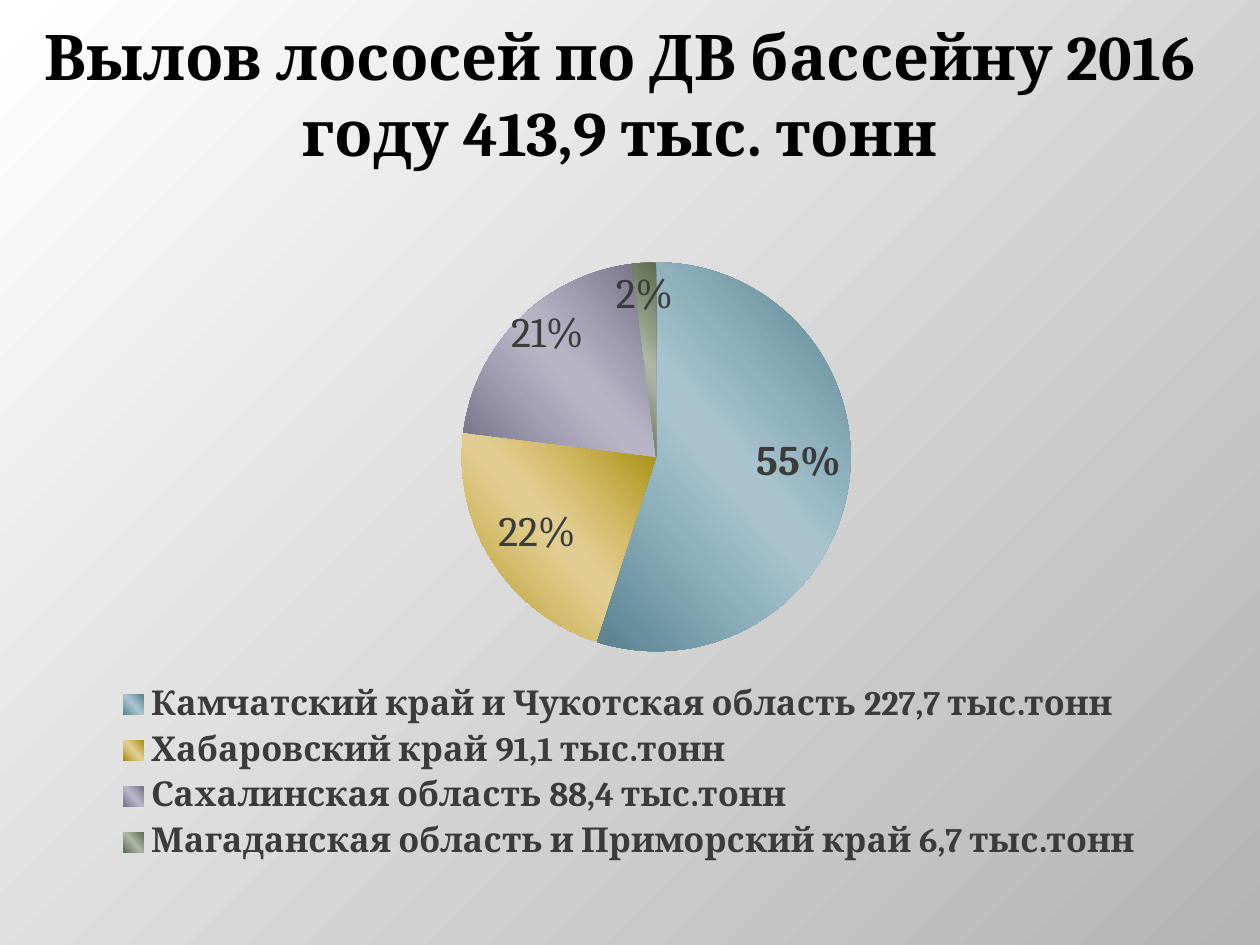
from lxml import etree
from pptx import Presentation
from pptx.chart.data import CategoryChartData
from pptx.dml.color import RGBColor
from pptx.enum import chart as ch, text as tx
from pptx.oxml.ns import qn
from pptx.util import Cm, Pt

TITLE = "Вылов лососей по ДВ бассейну 2016 году 413,9 тыс. тонн"
# region, share, gradient from edge to middle and back
CATCH = [
    ("Камчатский край и Чукотская область 227,7 тыс.тонн", 55,
     ("58808D", "8EB1BD", "A8C3CD", "A8C3CD", "8FB1BE", "58808D")),
    ("Хабаровский край 91,1 тыс.тонн", 22,
     ("A38C08", "D4BC6B", "E1CD91", "E1CD91", "D4BD6D", "A38C08")),
    ("Сахалинская область 88,4 тыс.тонн", 21,
     ("716E83", "A3A0B4", "B7B5C5", "B7B5C5", "A4A1B4", "716E83")),
    ("Магаданская область и Приморский край 6,7 тыс.тонн", 2,
     ("5D6B4D", "929D86", "ACB5A4", "ACB5A4", "939E87", "5D6B4D")),
]
STEPS = (0, 33, 47, 53, 68, 100)
ANGLE = 139
THEME = {
    "font": "Cambria", "ink": "000000", "soft": "3B3B3B",
    "back": ("FFFFFF", "B4B4B4"),
    "title": 36, "legend": 19.6, "label": 24, "base": 10,
}
# all lengths in centimetres; chart parts are measured from the chart's corner
TITLE_BOX = (0.43, 0.76, 24.13, 4.11)
CHART_BOX = (1.27, 4.45, 22.86, 13.08)
PIE = {"x": 8.04, "y": 0.84, "w": 7.84, "h": 7.84}
LEGEND = {"x": 1.02, "y": 9.23, "w": 20.8, "h": 3.83}
NUDGE = {"x": -0.26, "y": -0.3}


def style(font, size, ink, bold):
    look = {"name": THEME["font"], "size": Pt(size), "bold": bold}
    for key, val in look.items():
        setattr(font, key, val)
    font.color.rgb = RGBColor.from_string(THEME[ink])


def grade(node, stops):
    """Replace the colour stops of a gradient fill."""
    row = node.find(qn("a:gsLst"))
    for old in list(row):
        row.remove(old)
    for pos, hue in stops:
        stop = etree.SubElement(row, qn("a:gs"), pos=str(pos * 1000))
        etree.SubElement(stop, qn("a:srgbClr"), val=hue)


def place(node, spot, after=None, inner=False, edge=True):
    """Give a chart part a manual layout, from the edge or as an offset."""
    for old in node.findall(qn("c:layout")):
        node.remove(old)
    lay = etree.Element(qn("c:layout"))
    man = etree.SubElement(lay, qn("c:manualLayout"))
    if inner:
        etree.SubElement(man, qn("c:layoutTarget"), val="inner")
    if edge:
        for key in "xy":
            etree.SubElement(man, qn(f"c:{key}Mode"), val="edge")
    wide, high = CHART_BOX[2:]
    for key, val in spot.items():
        part = val / (wide if key in "xw" else high)
        etree.SubElement(man, qn(f"c:{key}"), val=str(part))
    node.insert(node.index(node.find(qn(after))) + 1 if after else 0, lay)


def paint(slide):
    slide.background.fill.gradient()
    node = slide.element.find(".//" + qn("p:bgPr")).find(qn("a:gradFill"))
    grade(node, zip((0, 100), THEME["back"]))
    node.remove(node.find(qn("a:lin")))
    way = etree.SubElement(node, qn("a:path"))
    way.set("path", "circle")
    etree.SubElement(way, qn("a:fillToRect"), r="100000", b="100000")


def head(slide):
    title = slide.shapes.title
    title.left, title.top, title.width, title.height = map(Cm, TITLE_BOX)
    frame = title.text_frame
    frame.text = TITLE
    look = {"word_wrap": True, "auto_size": tx.MSO_AUTO_SIZE.NONE,
            "vertical_anchor": tx.MSO_ANCHOR.MIDDLE, "margin_bottom": Cm(2)}
    for key, val in look.items():
        setattr(frame, key, val)
    para = frame.paragraphs[0]
    para.alignment = tx.PP_ALIGN.CENTER
    style(para.runs[0].font, THEME["title"], "ink", True)


def pie(slide):
    names, shares, hues = zip(*CATCH)
    data = CategoryChartData()
    data.categories = names
    data.add_series("Series 1", shares)
    chart = slide.shapes.add_chart(
        ch.XL_CHART_TYPE.PIE, *map(Cm, CHART_BOX), data).chart
    chart.has_title = False
    style(chart.font, THEME["base"], "ink", False)

    chart.has_legend = True
    legend = chart.legend
    legend.position = ch.XL_LEGEND_POSITION.BOTTOM
    legend.include_in_layout = False
    style(legend.font, THEME["legend"], "soft", True)

    plot = chart.plots[0]
    plot.vary_by_categories = True
    plot.has_data_labels = False
    series = plot.series[0]
    labels = series.data_labels
    look = {"show_percentage": True, "show_value": False,
            "number_format": "0%", "number_format_is_linked": False,
            "position": ch.XL_LABEL_POSITION.INSIDE_END}
    for key, val in look.items():
        setattr(labels, key, val)
    style(labels.font, THEME["label"], "soft", False)

    for i in range(len(CATCH)):
        form = series.points[i].format
        form.fill.gradient()
        form.line.fill.background()
    for i, bold in ((0, True), (2, False)):
        label = series.points[i].data_label
        style(label.font, THEME["label"], "soft", bold)
        label.position = look["position"]

    root = chart.element
    for key, val in (("showVal", "0"), ("showPercent", "1")):
        for node in root.xpath(f".//c:dLbl/c:{key}"):
            node.set("val", val)
    for node, tints in zip(root.xpath(".//c:dPt//a:gradFill"), hues):
        grade(node, zip(STEPS, tints))
        node.find(qn("a:lin")).set("ang", str(ANGLE * 60000))
    place(root.xpath(".//c:plotArea")[0], PIE, inner=True)
    place(root.xpath(".//c:legend")[0], LEGEND, after="c:legendPos")
    place(root.xpath(".//c:dLbl")[1], NUDGE, after="c:idx", edge=False)


def main():
    deck = Presentation()
    deck.slide_width, deck.slide_height = Cm(25.4), Cm(19.05)
    slide = deck.slides.add_slide(deck.slide_layouts[5])
    paint(slide)
    head(slide)
    pie(slide)
    deck.save("out.pptx")


if __name__ == "__main__":
    main()
